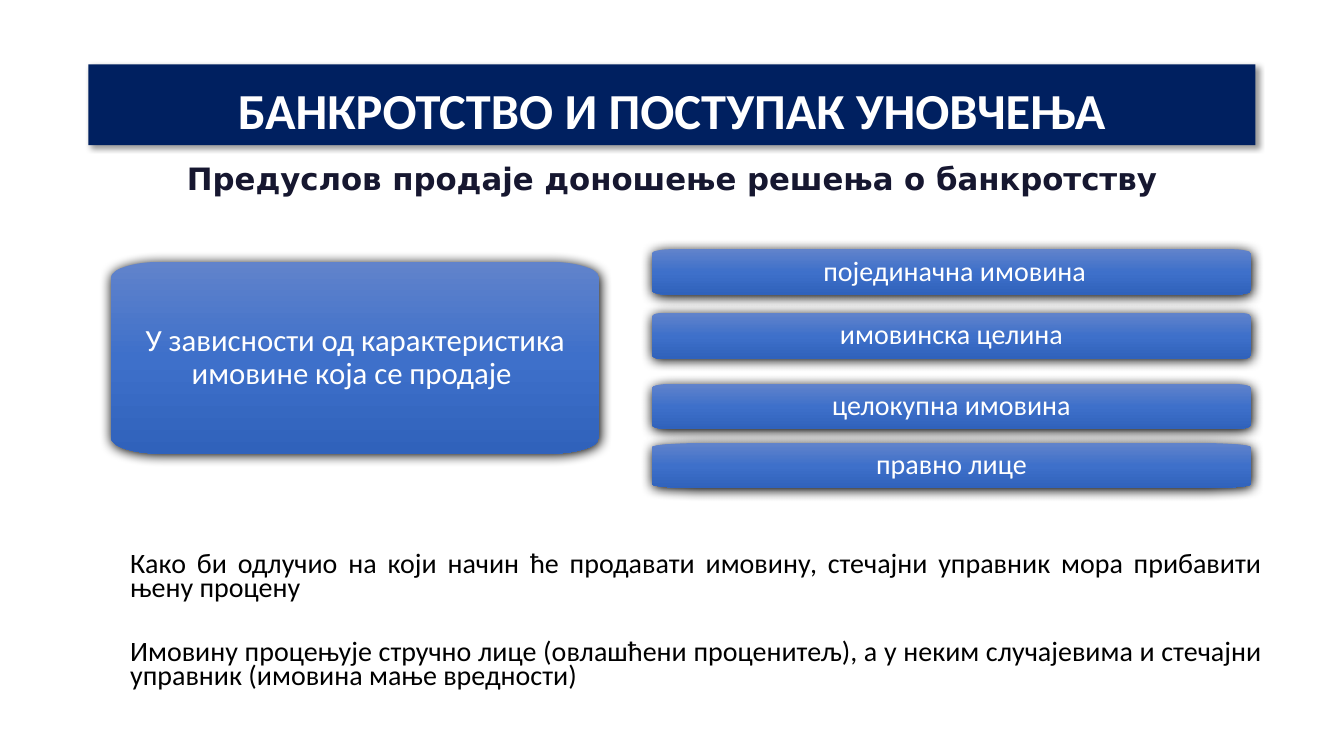
import copy

import lxml.etree
import pptx
import pptx.dml.color
import pptx.enum.text
import pptx.oxml
import pptx.oxml.ns
import pptx.util
from pptx.util import Cm

ALIGN = pptx.enum.text.PP_ALIGN
ANCHOR = pptx.enum.text.MSO_ANCHOR
qn = pptx.oxml.ns.qn
WHITE = "FFFFFF"
NAVY = "002060"
CARD_GRADIENT = ["6183CB", "3E70CA", "3062BB"]
CURVE = 0.55  # control point distance for a quarter ellipse

# Right-hand column: label, top and corner width in cm
ASSET_CARDS = [
    (" појединачна имовина", 6.28, 0.5),
    ("имовинска целина", 7.89, 0.2),
    ("целокупна имовина", 9.67, 0.53),
    ("правно лице", 11.16, 1.5),
]
NOTES = [
    "Како би одлучио на који начин ће продавати имовину, "
    "стечајни управник мора прибавити њену процену",
    "Имовину процењује стручно лице (овлашћени проценитељ), "
    "а у неким случајевима и стечајни управник (имовина мање вредности)",
]


def color(hex_text):
    return pptx.dml.color.RGBColor.from_string(hex_text)


def write(box, texts, size, hex_text, font="Calibri", bold=False,
          align=ALIGN.CENTER, anchor=ANCHOR.MIDDLE, spacing=0.9, gap=0):
    """Fill a box with paragraphs, gap points apart."""
    frame = box.text_frame
    frame.word_wrap = True
    frame.auto_size = pptx.enum.text.MSO_AUTO_SIZE.NONE
    frame.vertical_anchor = anchor
    for index, text in enumerate(texts):
        para = frame.add_paragraph() if index else frame.paragraphs[0]
        para.alignment = align
        para.line_spacing = spacing
        para.space_before = pptx.util.Pt(gap if index else 0)
        span = para.add_run()
        span.text = text
        span.font.name = font
        span.font.size = pptx.util.Pt(size)
        span.font.bold = bold
        span.font.color.rgb = color(hex_text)


def add_shadow(shape, opacity, blur, distance, angle):
    """Blur and distance are in points, opacity in percent."""
    shape.shadow.inherit = False
    effects = shape.element.spPr.find(qn("a:effectLst"))
    effects.append(pptx.oxml.parse_xml(
        f'<a:outerShdw {pptx.oxml.ns.nsdecls("a")} blurRad="{pptx.util.Pt(blur)}" '
        f'dist="{pptx.util.Pt(distance)}" dir="{angle * 60000}" algn="ctr" '
        f'rotWithShape="0"><a:srgbClr val="000000">'
        f'<a:alpha val="{opacity * 1000}"/></a:srgbClr></a:outerShdw>'))


def fill_gradient(shape, hex_texts):
    """Spread the colours evenly from top to bottom."""
    shape.fill.gradient()
    shape.fill.gradient_angle = 270
    stop_list = shape.element.spPr.find(".//" + qn("a:gsLst"))
    while len(stop_list) < len(hex_texts):
        stop_list.insert(1, copy.deepcopy(stop_list[0]))
    for index, stop in enumerate(shape.fill.gradient_stops):
        stop.color.rgb = color(hex_texts[index])
        stop.position = index / (len(hex_texts) - 1)


def round_corners(shape):
    """Turn every second segment of the outline into a curve."""
    outline = shape.element.spPr.find(".//" + qn("a:path"))
    ends = [(int(point.get("x")), int(point.get("y")))
            for point in outline.iter(qn("a:pt"))]
    segments = outline.findall(qn("a:lnTo"))
    for corner in range(4):
        start, end = ends[2 * corner], ends[2 * corner + 1]
        tip = (end[0], start[1]) if corner % 2 else (start[0], end[1])
        curve = lxml.etree.Element(qn("a:cubicBezTo"))
        for origin, share in ((start, CURVE), (end, CURVE), (end, 0)):
            x, y = (round(a + share * (b - a)) for a, b in zip(origin, tip))
            lxml.etree.SubElement(curve, qn("a:pt"), x=str(x), y=str(y))
        outline.replace(segments[2 * corner], curve)


def add_card(page, text, size, left, top, width, height, corner_x, corner_y):
    """Gradient card with elliptical corners."""
    right, bottom = left + width, top + height
    corners = [
        (left, top + corner_y), (left + corner_x, top),
        (right - corner_x, top), (right, top + corner_y),
        (right, bottom - corner_y), (right - corner_x, bottom),
        (left + corner_x, bottom), (left, bottom - corner_y),
    ]
    points = [(Cm(x), Cm(y)) for x, y in corners]
    builder = page.shapes.build_freeform(*points[0])
    builder.add_line_segments(points[1:], close=True)
    card = builder.convert_to_shape()
    round_corners(card)
    fill_gradient(card, CARD_GRADIENT)
    card.line.fill.background()
    add_shadow(card, 100, 8.5, 1, 90)
    write(card, [text], size, WHITE)


def add_title(page, text):
    title = page.shapes.title
    title.left, title.top = Cm(2.23), Cm(1.62)
    title.width, title.height = Cm(29.41), Cm(2.04)
    title.fill.solid()
    title.fill.fore_color.rgb = color(NAVY)
    add_shadow(title, 40, 4, 3, 45)
    write(title, [text], 36, WHITE, bold=True, anchor=ANCHOR.BOTTOM)


def add_text(page, left, top, width, height):
    return page.shapes.add_textbox(Cm(left), Cm(top), Cm(width), Cm(height))


def main():
    deck = pptx.Presentation()
    deck.slide_width, deck.slide_height = Cm(33.87), Cm(19.05)
    page = deck.slides.add_slide(deck.slide_layouts[5])

    # Heading
    add_title(page, "БАНКРОТСТВО И ПОСТУПАК УНОВЧЕЊА")
    subtitle = add_text(page, 2.23, 4.29, 29.41, 1.15)
    subtitle.text_frame.margin_bottom = Cm(0.5)
    write(subtitle, ["Предуслов продаје доношење решења о банкротству"], 22,
          "161730", font="DejaVu Sans", bold=True, anchor=ANCHOR.BOTTOM,
          spacing=0.7)

    # Cards
    add_card(page, "У зависности од карактеристика имовине која се продаје ",
             22, 2.8, 6.6, 12.3, 4.83, 1.24, 0.4)
    for label, top, corner_x in ASSET_CARDS:
        add_card(page, label, 20, 16.43, top, 15.1, 1.15, corner_x, 0.11)

    # Notes
    notes = add_text(page, 3.03, 13.41, 29.03, 4.83)
    notes.text_frame.margin_top = Cm(0.58)
    write(notes, NOTES, 20, "000000", align=ALIGN.JUSTIFY, anchor=ANCHOR.TOP,
          spacing=0.7, gap=29)

    deck.save("out.pptx")


if __name__ == "__main__":
    main()
